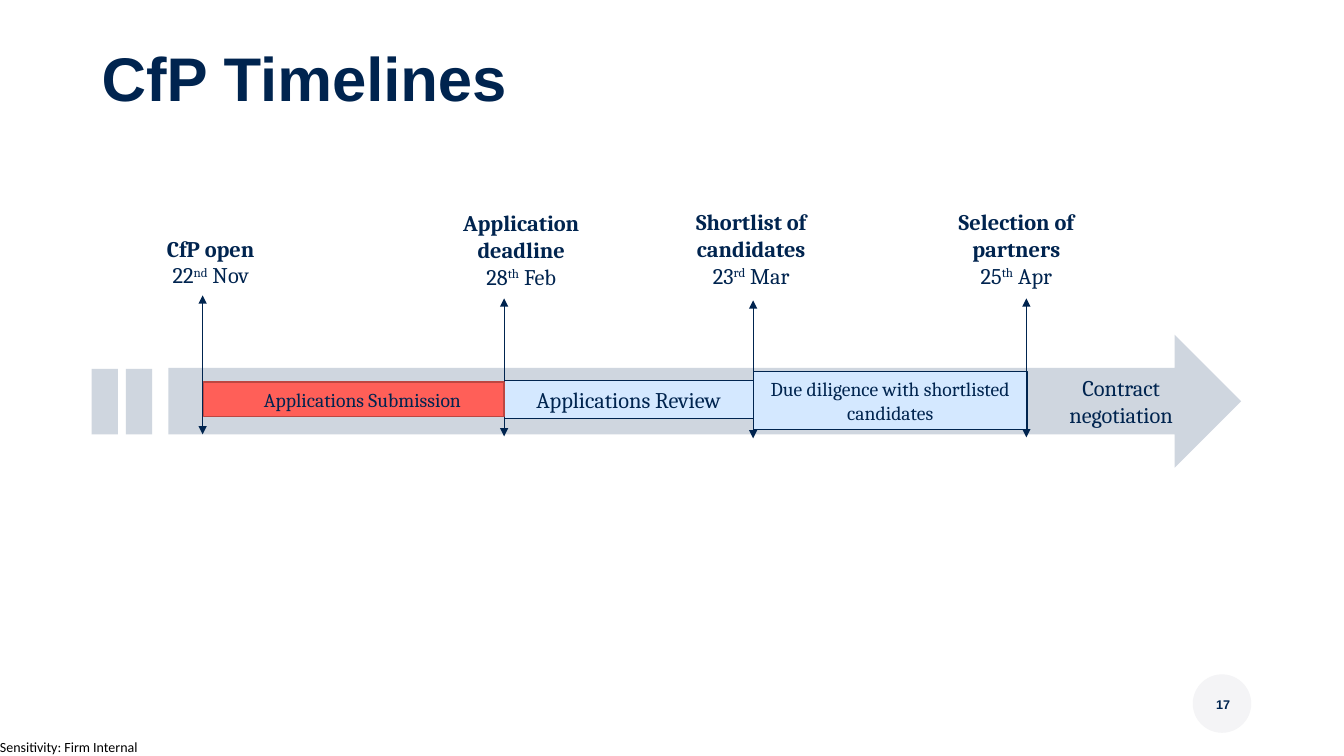
"""Build the CfP timeline slide."""
from dataclasses import dataclass

from lxml.etree import SubElement
from pptx import Presentation
from pptx.dml.color import RGBColor
from pptx.enum.shapes import MSO_CONNECTOR as Connector, MSO_SHAPE as Preset
from pptx.enum.text import MSO_ANCHOR as Anchor, PP_ALIGN as Align
from pptx.oxml.ns import qn
from pptx.shapes.autoshape import Shape
from pptx.slide import Slide
from pptx.util import Inches, Pt

NAVY = RGBColor(0x00, 0x24, 0x4F)
GREY = RGBColor(0xCF, 0xD6, 0xDF)
PALE_GREY = RGBColor(0xF4, 0xF4, 0xF6)
PALE_BLUE = RGBColor(0xD4, 0xE8, 0xFF)
CORAL = RGBColor(0xFF, 0x5F, 0x58)
DARK_CORAL = RGBColor(0xBD, 0x46, 0x41)
BLACK = RGBColor(0x00, 0x00, 0x00)


@dataclass(frozen=True)
class Box:
    left: float
    top: float
    width: float
    height: float

    def lengths(self) -> list[int]:
        return [Inches(side) for side in (self.left, self.top, self.width, self.height)]


@dataclass(frozen=True)
class Style:
    size: float = 16
    font: str = "Cambria"
    color: RGBColor = NAVY
    bold: bool = False
    align: Align = Align.CENTER


@dataclass(frozen=True)
class Stage:
    label: str
    box: Box
    size: float
    fill: RGBColor = PALE_BLUE
    line: RGBColor = NAVY
    line_width: float = 0.75
    margin_left: float = 0.1


@dataclass(frozen=True)
class Milestone:
    name: str
    day: str
    suffix: str
    month: str
    box: Box
    marker_x: float
    marker_top: float
    marker_bottom: float


STAGES = [
    Stage("Due diligence with shortlisted candidates", Box(7.47, 3.69, 2.72, 0.57), 14),
    Stage("Applications Review", Box(5, 3.78, 2.47, 0.37), 16),
]
SUBMISSION = Stage("Applications Submission", Box(2.02, 3.79, 2.98, 0.34), 14,
                   CORAL, DARK_CORAL, 1, 0.27)
MILESTONES = [
    Milestone("CfP open", "22", "nd", " Nov", Box(1.43, 2.28, 1.32, 0.64), 2.01, 2.93, 4.31),
    Milestone("Application deadline", "28", "th", " Feb", Box(4.38, 2.03, 1.58, 0.91), 5, 2.96, 4.33),
    Milestone("Shortlist of candidates", "23", "rd", " Mar", Box(6.66, 2.02, 1.58, 0.91), 7.47, 2.98, 4.35),
    Milestone("Selection of partners", "25", "th", " Apr", Box(9.29, 2.02, 1.58, 0.91), 10.18, 2.96, 4.34),
]


def write(shape: Shape, text: str, style: Style) -> None:
    frame = shape.text_frame
    frame.word_wrap = True
    frame.text = text
    for paragraph in frame.paragraphs:
        paragraph.alignment = style.align
        for run in paragraph.runs:
            run.font.size = Pt(style.size)
            run.font.name = style.font
            run.font.bold = style.bold
            run.font.color.rgb = style.color


def add_text(slide: Slide, box: Box, text: str, style: Style) -> Shape:
    shape = slide.shapes.add_textbox(*box.lengths())
    write(shape, text, style)
    return shape


def add_block(slide: Slide, preset: Preset, box: Box, fill: RGBColor) -> Shape:
    shape = slide.shapes.add_shape(preset, *box.lengths())
    shape.shadow.inherit = False
    shape.fill.solid()
    shape.fill.fore_color.rgb = fill
    shape.line.fill.background()
    return shape


def add_stage(slide: Slide, stage: Stage) -> None:
    shape = add_block(slide, Preset.RECTANGLE, stage.box, stage.fill)
    shape.line.color.rgb = stage.line
    shape.line.width = Pt(stage.line_width)
    write(shape, stage.label, Style(stage.size))
    shape.text_frame.margin_left = Inches(stage.margin_left)
    shape.text_frame.vertical_anchor = Anchor.MIDDLE


def add_marker(slide: Slide, milestone: Milestone) -> None:
    x = Inches(milestone.marker_x)
    connector = slide.shapes.add_connector(
        Connector.STRAIGHT, x, Inches(milestone.marker_bottom), x, Inches(milestone.marker_top))
    connector.line.color.rgb = NAVY
    connector.line.width = Pt(0.5)
    properties = connector._element.spPr
    line = properties.find(qn("a:ln"))
    for end in ("a:headEnd", "a:tailEnd"):
        SubElement(line, qn(end), type="triangle")
    SubElement(properties, qn("a:effectLst"))


def add_milestone(slide: Slide, milestone: Milestone) -> None:
    shape = add_text(slide, milestone.box, milestone.name, Style(bold=True))
    paragraph = shape.text_frame.add_paragraph()
    paragraph.alignment = Align.CENTER
    for text in (milestone.day, milestone.suffix, milestone.month):
        run = paragraph.add_run()
        run.text = text
        run.font.size = Pt(16)
        run.font.name = "Cambria"
        run.font.color.rgb = NAVY
        if text == milestone.suffix:
            run._r.get_or_add_rPr().set("baseline", "30000")


def main() -> None:
    presentation = Presentation()
    presentation.slide_width = Inches(13.33)
    presentation.slide_height = Inches(7.5)
    slide = presentation.slides.add_slide(presentation.slide_layouts[6])

    sensitivity = add_text(slide, Box(0, 7.33, 1.8, 0.17), "Sensitivity: Firm Internal",
                           Style(10, "Calibri", BLACK, align=Align.LEFT))
    frame = sensitivity.text_frame
    frame.margin_left = frame.margin_top = frame.margin_right = frame.margin_bottom = 0
    add_block(slide, Preset.OVAL, Box(11.83, 6.69, 0.58, 0.58), PALE_GREY)
    add_text(slide, Box(11.92, 6.86, 0.42, 0.25), "17", Style(9, "Arial", bold=True))
    title = add_text(slide, Box(0.91, 0.35, 11.5, 0.68), "CfP Timelines",
                     Style(44, "Arial", bold=True, align=Align.LEFT))
    title.text_frame.margin_top = Inches(0.05)

    add_block(slide, Preset.RIGHT_ARROW, Box(1.67, 3.32, 10.64, 1.32), GREY)
    for left in (0.91, 1.25):
        add_block(slide, Preset.RECTANGLE, Box(left, 3.66, 0.26, 0.65), GREY)
    for stage in STAGES:
        add_stage(slide, stage)
    for milestone in MILESTONES:
        add_marker(slide, milestone)
        add_milestone(slide, milestone)
    add_stage(slide, SUBMISSION)
    add_text(slide, Box(10.18, 3.66, 1.88, 0.64), "Contract\nnegotiation", Style())

    presentation.save("out.pptx")


if __name__ == "__main__":
    main()
